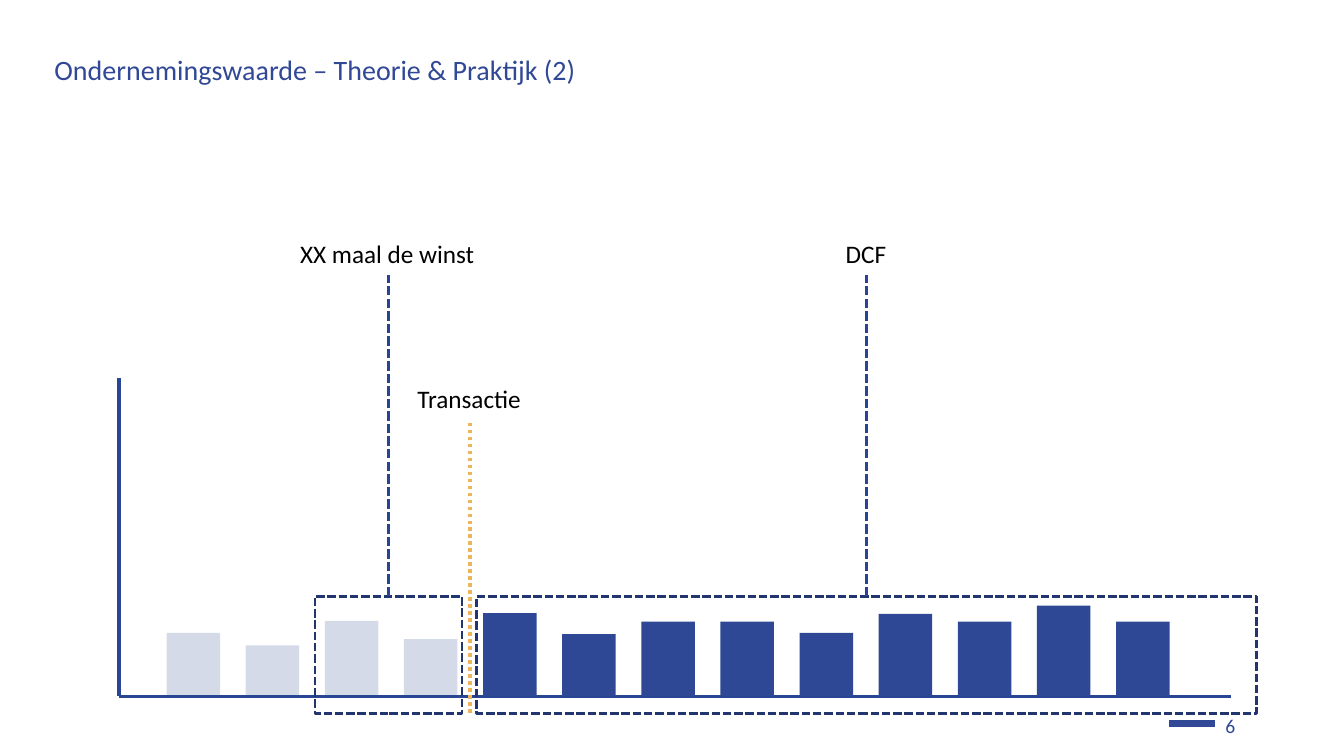
import pptx
import pptx.util
import pptx.dml.color
import pptx.enum.dml
import pptx.enum.shapes
import pptx.enum.text
import pptx.oxml
import pptx.oxml.ns

Pt = pptx.util.Pt
DASH = pptx.enum.dml.MSO_LINE
RECTANGLE = pptx.enum.shapes.MSO_SHAPE.RECTANGLE
STRAIGHT = pptx.enum.shapes.MSO_CONNECTOR.STRAIGHT
ALIGN = pptx.enum.text.PP_ALIGN

BLUE = "2F4895"
TITLE_BLUE = "304895"
AXIS_BLUE = "284694"
FRAME_BLUE = "23356E"
GOLD = "EDB559"
BLACK = "000000"

PAST_PROFITS = [45.5, 36.5, 54, 41]
FUTURE_PROFITS = [59.5, 44.5, 53.5, 53.5, 45.5, 59, 53.5, 65, 53.5]


def paint(color_format, hex_color):
    color_format.rgb = pptx.dml.color.RGBColor.from_string(hex_color)


def write(paragraph, wording, size, hex_color):
    run = paragraph.add_run()
    run.text = wording
    run.font.name = "Calibri"
    run.font.size = Pt(size)
    paint(run.font.color, hex_color)


def add_label(slide, box, wording, size=18, hex_color=BLACK):
    label = slide.shapes.add_textbox(*map(Pt, box))
    label.text_frame.word_wrap = False
    label.text_frame.auto_size = pptx.enum.text.MSO_AUTO_SIZE.SHAPE_TO_FIT_TEXT
    write(label.text_frame.paragraphs[0], wording, size, hex_color)


def add_line(slide, start, end, hex_color, width, dash=None):
    line = slide.shapes.add_connector(STRAIGHT, *map(Pt, (*start, *end)))
    line.line.width = Pt(width)
    paint(line.line.color, hex_color)
    if dash:
        line.line.dash_style = dash
    properties = line._element.spPr
    properties.append(pptx.oxml.parse_xml(
        f"<a:effectLst {pptx.oxml.ns.nsdecls('a')}/>"))
    return line


def add_bar(slide, box, opacity):
    bar = slide.shapes.add_shape(RECTANGLE, *map(Pt, box))
    bar.shadow.inherit = False
    bar.fill.solid()
    paint(bar.fill.fore_color, BLUE)
    bar.line.fill.background()
    if opacity < 100:
        color = bar._element.spPr.find(".//" + pptx.oxml.ns.qn("a:srgbClr"))
        color.append(pptx.oxml.parse_xml(
            f'<a:alpha {pptx.oxml.ns.nsdecls("a")} val="{opacity * 1000}"/>'))


def add_title(slide, box, wording):
    title = slide.shapes.title
    title.left, title.top, title.width, title.height = map(Pt, box)
    frame = title.text_frame
    frame.margin_left = frame.margin_top = frame.margin_right = frame.margin_bottom = 0
    frame.vertical_anchor = pptx.enum.text.MSO_ANCHOR.MIDDLE
    frame.paragraphs[0].alignment = ALIGN.JUSTIFY
    write(frame.paragraphs[0], wording, 20, TITLE_BLUE)


def add_page_number(slide, box, number):
    left, top, width, height = box
    dash_length = 33
    add_line(slide, (left, top + 10.8), (left + dash_length, top + 10.8), TITLE_BLUE, 5.15)
    add_label(slide, (left + dash_length, top, width - dash_length, height), number, 14, BLUE)


def add_profit_chart(slide, box):
    left, top, width, height = box
    baseline = top + height
    add_line(slide, (left, top), (left, baseline), AXIS_BLUE, 2.5)
    add_line(slide, (left, baseline), (left + width, baseline), AXIS_BLUE, 2.5)
    for year, profit in enumerate(PAST_PROFITS + FUTURE_PROFITS):
        opacity = 20 if year < len(PAST_PROFITS) else 100
        add_bar(slide, (left + 34 + 56.52 * year, baseline - profit, 38.2, profit), opacity)


def add_transaction(slide, box):
    left, top, width, height = box
    line_x = left + width / 2
    add_line(slide, (line_x, top + height), (line_x, top + 29.5), GOLD, 2.5, DASH.ROUND_DOT)
    add_label(slide, (left, top, width, 29), "Transactie")


def add_method(slide, box, wording, label_width):
    left, top, width, height = box
    frame_height = 83.5
    middle = left + width / 2
    frame_top = top + height - frame_height
    frame = slide.shapes.add_shape(
        RECTANGLE, *map(Pt, (left, frame_top, width, frame_height)))
    frame.shadow.inherit = False
    frame.fill.background()
    paint(frame.line.color, FRAME_BLUE)
    frame.line.width = Pt(2)
    frame.line.dash_style = DASH.SQUARE_DOT
    leader = add_line(slide, (middle, frame_top), (middle, top + 29.5),
                      "284494", 2.25, DASH.SQUARE_DOT)
    leader.begin_connect(frame, 0)
    add_label(slide, (middle - label_width / 2, top, label_width, 29), wording)


def main():
    deck = pptx.Presentation()
    deck.slide_width, deck.slide_height = Pt(960), Pt(540)
    slide = deck.slides.add_slide(deck.slide_layouts[5])
    add_page_number(slide, (835.2, 506.2, 76, 24.5), "6")
    add_profit_chart(slide, (85, 270, 794, 227.5))
    add_transaction(slide, (291, 270, 89.2, 239))
    add_method(slide, (225, 167, 105, 342.5), "XX maal de winst", 140.4)
    add_method(slide, (340.5, 167, 557, 342.5), "DCF", 44)
    add_title(slide, (38.9, 37.5, 879, 24.5), "Ondernemingswaarde – Theorie & Praktijk (2)")
    deck.save("out.pptx")


if __name__ == "__main__":
    main()
